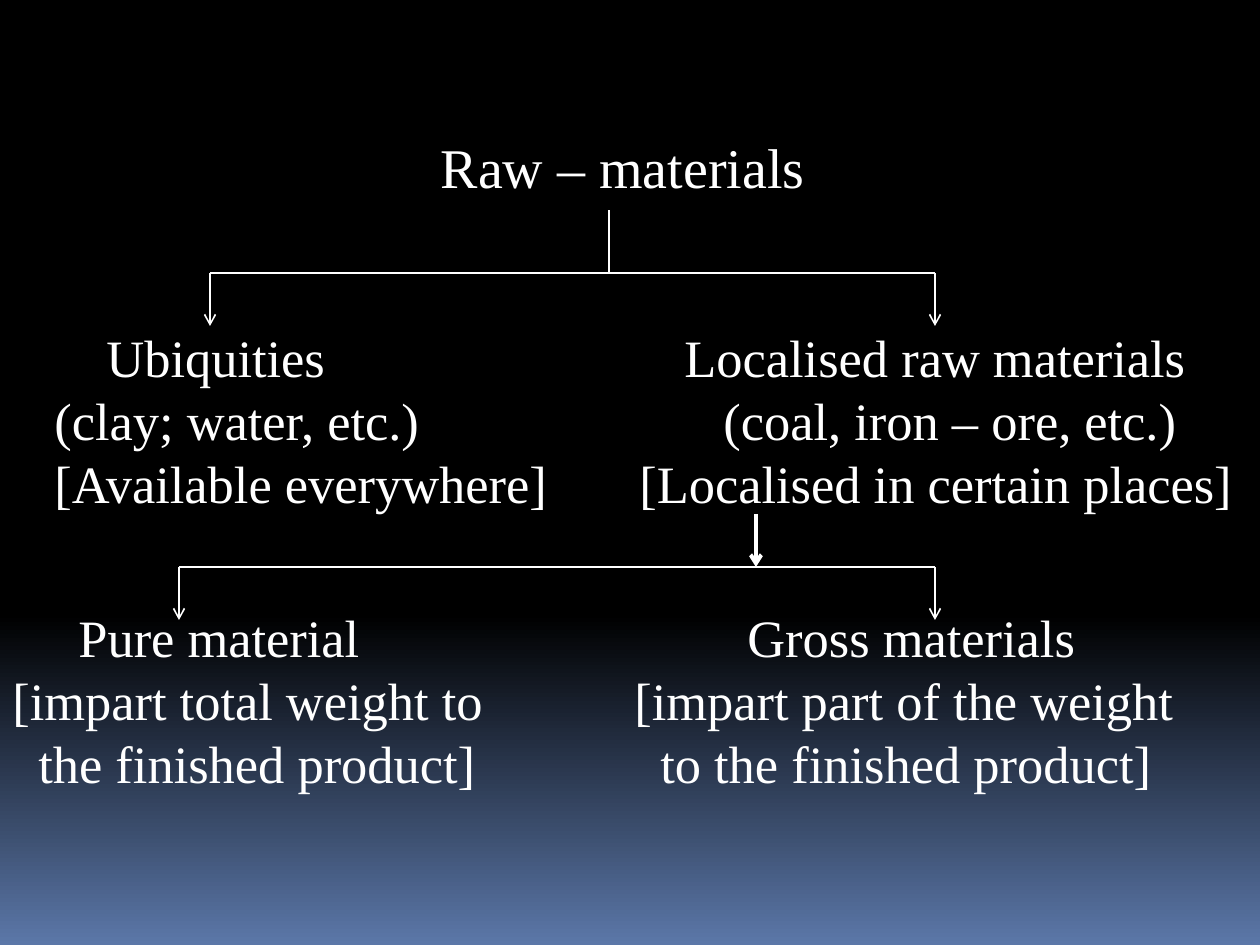
from pptx import Presentation
from pptx import util as u
from pptx.dml.color import RGBColor
from pptx.enum import shapes, text
from pptx.oxml.ns import qn
from lxml import etree

PX = u.Inches(1) // 126
FONT = "Times New Roman"
WHITE = "FFFFFF"


def px(length):
    return u.Emu(length * PX)


def color(code):
    return RGBColor.from_string(code)


def paint_background(page):
    fill = page.background.fill
    fill.gradient()
    fill.gradient_angle = 270
    for stop, position, code in zip(fill.gradient_stops, (0.65, 1), ("000000", "5B77A8")):
        stop.position = position
        stop.color.rgb = color(code)


def set_tabs(para, stops):
    tabs = etree.SubElement(para._p.get_or_add_pPr(), qn("a:tabLst"))
    for stop in stops:
        etree.SubElement(tabs, qn("a:tab"), pos=str(px(stop)), algn="l")


def add_text(page, left, top, width, height, lines, size):
    box = page.shapes.add_textbox(px(left), px(top), px(width), px(height))
    frame = box.text_frame
    frame.word_wrap = True
    frame.auto_size = text.MSO_AUTO_SIZE.SHAPE_TO_FIT_TEXT
    frame.text = "\n".join(lines)
    for para in frame.paragraphs:
        for span in para.runs:
            span.font.name = FONT
            span.font.size = u.Pt(size)
            span.font.color.rgb = color(WHITE)
    return frame.paragraphs


def add_title(page, title):
    para = add_text(page, 42, 126, 1176, 81, [title], 32)[0]
    para.alignment = text.PP_ALIGN.CENTER


def add_columns(page, left, top, width, rows):
    lines = [("\t" if start else "") + first + "\t" + second
             for start, first, middle, second in rows]
    paras = add_text(page, left, top, width, 204, lines, 30)
    for para, (start, _, middle, _) in zip(paras, rows):
        set_tabs(para, [stop for stop in (start, middle) if stop])


def add_line(page, x1, y1, x2, y2, weight=0.94, arrow=False):
    line = page.shapes.add_connector(
        shapes.MSO_CONNECTOR.STRAIGHT, px(x1), px(y1), px(x2), px(y2))
    line.line.color.rgb = color(WHITE)
    line.line.width = u.Pt(weight)
    if arrow:
        etree.SubElement(line.line._get_or_add_ln(), qn("a:tailEnd"), type="arrow")
    etree.SubElement(line._element.spPr, qn("a:effectLst"))


def add_branch(page, left, right, top):
    add_line(page, left, top, right, top)
    for x in (left, right):
        add_line(page, x, top, x, top + 53, arrow=True)


def main():
    deck = Presentation()
    deck.slide_width, deck.slide_height = px(1260), px(945)
    page = deck.slides.add_slide(deck.slide_layouts[6])
    paint_background(page)
    add_title(page, "Raw – materials ")
    add_columns(page, 42, 319, 1218, [
        (52, "Ubiquities", 630, "Localised raw materials"),
        (0, "(clay; water, etc.)", 669, "(coal, iron – ore, etc.)"),
        (0, "[Available everywhere]", 585, "[Localised in certain places]"),
    ])
    add_columns(page, 0, 599, 1260, [
        (66, "Pure material", 735, "Gross materials"),
        (0, "[impart total weight to", 622, "[impart part of the weight"),
        (26, "the finished product]", 648, "to the finished product]"),
    ])
    add_branch(page, 210, 935, 273)
    add_branch(page, 179, 935, 567)
    add_line(page, 609, 273, 609, 210)
    add_line(page, 756, 514, 756, 567, weight=2.25, arrow=True)
    deck.save("out.pptx")


if __name__ == "__main__":
    main()
